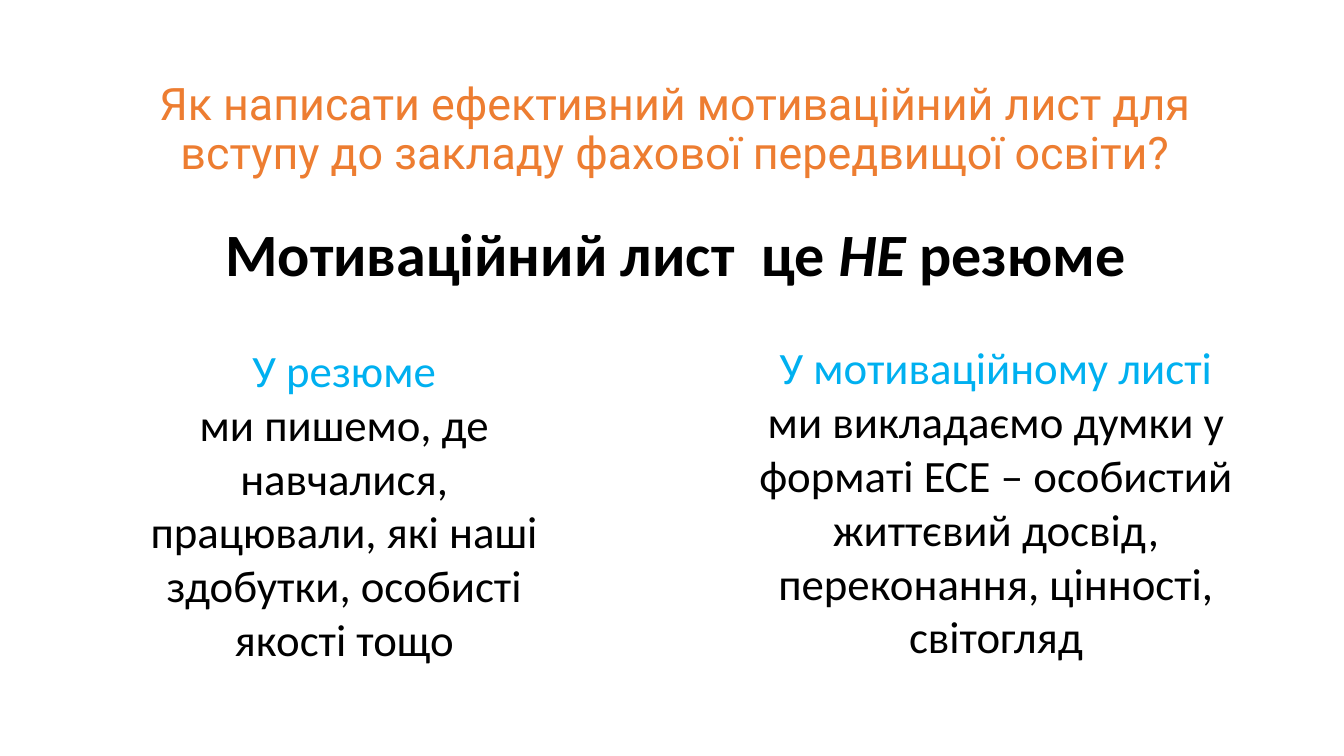
from pptx import Presentation
from pptx.dml.color import RGBColor
from pptx.enum.shapes import MSO_SHAPE
from pptx.enum.text import MSO_ANCHOR, MSO_AUTO_SIZE, PP_ALIGN
from pptx.util import Inches, Pt

WHITE = RGBColor(0xFF, 0xFF, 0xFF)
BLACK = RGBColor(0x00, 0x00, 0x00)
ORANGE = RGBColor(0xED, 0x7D, 0x31)
BLUE = RGBColor(0x00, 0xB0, 0xF0)
ROUND = MSO_SHAPE.ROUNDED_RECTANGLE
TOP, MIDDLE = MSO_ANCHOR.TOP, MSO_ANCHOR.MIDDLE
FIXED = MSO_AUTO_SIZE.NONE
CENTER = PP_ALIGN.CENTER
WIDTH, HEIGHT = Inches(13.33), Inches(7.5)
LEFT, SPAN = 7.13, 86.25


class Deck:
    """Hold the style and the current slide; boxes are in percent of the slide."""

    font = "Calibri"
    size = 32
    tight = 0.9

    def __init__(self):
        self.show = Presentation()
        self.show.slide_width, self.show.slide_height = WIDTH, HEIGHT
        self.slide = self.show.slides.add_slide(self.show.slide_layouts[5])

    def place(self, box):
        left, top, width, height = box
        return (round(WIDTH * left / 100), round(HEIGHT * top / 100),
                round(WIDTH * width / 100), round(HEIGHT * height / 100))

    def text(self, shape, lines, anchor, size=None, font=None, pitch=1.0):
        frame = shape.text_frame
        frame.word_wrap = True
        frame.auto_size = FIXED
        frame.vertical_anchor = anchor
        for index, runs in enumerate(lines):
            para = frame.add_paragraph() if index else frame.paragraphs[0]
            para.alignment = CENTER
            para.line_spacing = pitch
            for words, color, bold, slant in runs:
                run = para.add_run()
                run.text = words
                run.font.name = font or self.font
                run.font.size = Pt(size or self.size)
                run.font.color.rgb = color
                run.font.bold, run.font.italic = bold, slant

    def title(self, box, words):
        shape = self.slide.shapes.title
        shape.left, shape.top, shape.width, shape.height = self.place(box)
        shape.text_frame.margin_bottom = Inches(0.55)
        self.text(shape, [[(words, ORANGE, False, False)]], MIDDLE,
                  font="Roboto", pitch=self.tight)

    def heading(self, box, runs):
        shape = self.slide.shapes.add_textbox(*self.place(box))
        self.text(shape, [runs], MIDDLE, size=42.9, pitch=self.tight)

    def card(self, box, head, body, anchor):
        shape = self.slide.shapes.add_shape(ROUND, *self.place(box))
        shape.shadow.inherit = False
        shape.fill.solid()
        shape.fill.fore_color.rgb = WHITE
        shape.line.color.rgb = WHITE
        shape.line.width = Pt(1)
        self.text(shape, [[(head, BLUE, False, False)],
                          [(body, BLACK, False, False)]], anchor)

    def save(self):
        self.show.save("out.pptx")


def main():
    deck = Deck()
    deck.title((LEFT, 13.2, SPAN, 14.8),
               "Як написати ефективний мотиваційний лист для "
               "вступу до закладу фахової передвищої освіти?")
    deck.heading((LEFT, 28, SPAN, 12), [
        ("Мотиваційний лист  це ", BLACK, True, False),
        ("НЕ", BLACK, True, True),
        (" резюме", BLACK, True, False),
    ])
    deck.card((LEFT, 42.13, 36.98, 52.67), "У резюме",
              "ми пишемо, де навчалися, працювали, які наші здобутки, "
              "особисті якості тощо", TOP)
    deck.card((53.64, 40, 40.96, 52.67), "У мотиваційному листі",
              "ми викладаємо думки у форматі ЕСЕ ‒ особистий життєвий досвід, "
              "переконання, цінності, світогляд", MIDDLE)
    deck.save()


if __name__ == "__main__":
    main()
